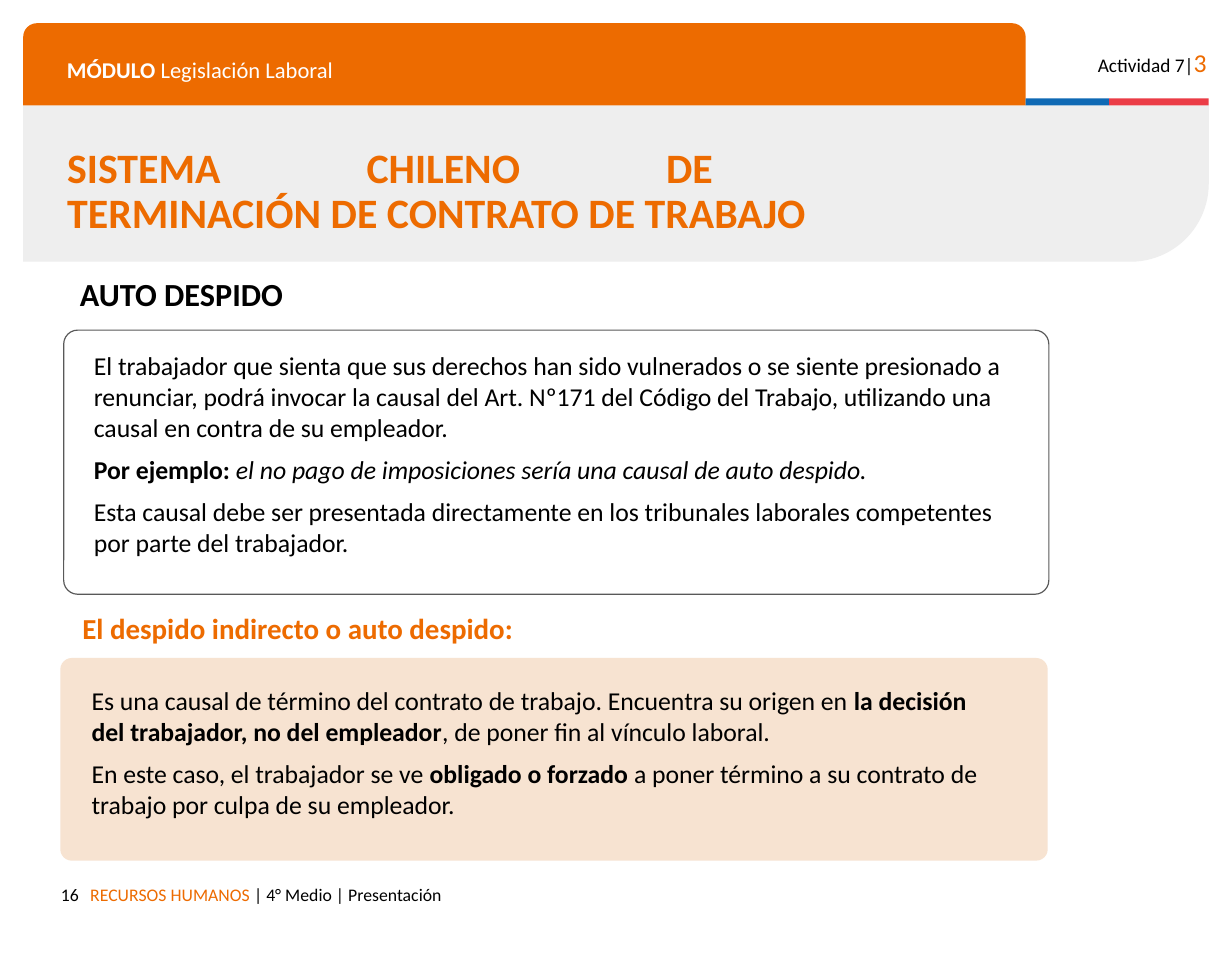
import pptx
import pptx.dml.color
import pptx.enum.shapes
import pptx.enum.text
import pptx.util
import lxml.etree

COLORS = {
    "orange": "ED6B00", "grey": "EEEEEE", "blue": "0F69B4", "red": "EB3C46",
    "peach": "F7E3D1", "outline": "595959", "black": "000000", "white": "FFFFFF",
}
SHAPES = pptx.enum.shapes.MSO_SHAPE
ALIGN = pptx.enum.text.PP_ALIGN
COLUMNS, ROWS = 106.3, 82.7
CELL = pptx.util.Inches(0.1)


def color(name):
    return pptx.dml.color.RGBColor.from_string(COLORS[name])


def place(box, left, top, width, height):
    return [round(cells * CELL) for cells in (box[0] + left, box[1] + top, width, height)]


def add_panel(slide, geometry, area, fill=None, outline=None, corners=()):
    panel = slide.shapes.add_shape(geometry, *area)
    panel.shadow.inherit = False
    for index, corner in enumerate(corners):
        panel.adjustments[index] = corner
    if fill:
        panel.fill.solid()
        panel.fill.fore_color.rgb = color(fill)
    else:
        panel.fill.background()
    if outline:
        panel.line.color.rgb = color(outline)
        panel.line.width = pptx.util.Pt(0.75)
    else:
        panel.line.fill.background()
    return panel


def write(slide, area, paragraphs, holder=None, size=16, ink="black", bold=False,
          align=ALIGN.LEFT, before=0, spacing=1.0, margin=0.05):
    if holder is None:
        holder = slide.shapes.add_textbox(*area)
    else:
        holder.left, holder.top, holder.width, holder.height = area
        slide.shapes.element.append(holder.element)
    frame = holder.text_frame
    frame.word_wrap = True
    frame.auto_size = pptx.enum.text.MSO_AUTO_SIZE.NONE
    frame.vertical_anchor = pptx.enum.text.MSO_ANCHOR.TOP
    frame.margin_left = frame.margin_right = pptx.util.Inches(0.1)
    frame.margin_top = frame.margin_bottom = pptx.util.Inches(margin)
    for index, runs in enumerate(paragraphs):
        paragraph = frame.add_paragraph() if index else frame.paragraphs[0]
        paragraph.alignment = align
        paragraph.line_spacing = spacing
        paragraph.space_before = pptx.util.Pt(before)
        properties = paragraph._p.get_or_add_pPr()
        properties.set("marL", "0")
        properties.set("indent", "0")
        lxml.etree.SubElement(properties, pptx.oxml.ns.qn("a:buNone"))
        for words, changes in runs:
            if words == "\n":
                paragraph.add_line_break()
                continue
            run = paragraph.add_run()
            run.text = words
            run.font.name = "Calibri"
            run.font.size = pptx.util.Pt(changes.get("size", size))
            run.font.color.rgb = color(changes.get("ink", ink))
            run.font.bold = changes.get("bold", bold)
            run.font.italic = changes.get("italic", False)


def add_header(slide, box):
    tab_width, tab_height, stripe = 86.5, 7.1, 0.6
    band = add_panel(slide, SHAPES.ROUND_1_RECTANGLE,
                     place(box, 0, tab_height, box[2], box[3] - tab_height),
                     "grey", corners=[0.5])
    band.element.spPr.xfrm.set("flipV", "1")
    add_panel(slide, SHAPES.ROUND_2_SAME_RECTANGLE,
              place(box, 0, 0, tab_width, tab_height), "orange", corners=[0.167, 0])
    left = tab_width
    for fill, width in (("blue", 7.2), ("red", 8.6)):
        add_panel(slide, SHAPES.RECTANGLE,
                  place(box, left, tab_height - stripe, width, stripe), fill)
        left += width
    write(slide, place(box, 2.8, 1.8, 81.4, 3.5),
          [[("MÓDULO ", {"bold": True}), ("Legislación Laboral", {})]],
          size=14, ink="white", margin=0.1)
    write(slide, place(box, 90.3, 1, 12.8, 3.8),
          [[("Actividad 7|", {}), ("3", {"size": 16, "ink": "orange"})]],
          size=12, align=ALIGN.RIGHT, margin=0.1)
    write(slide, place(box, 2.8, 10.2, 70.4, 9),
          [[("SISTEMA CHILENO DE ", {}), ("\n", {}),
            ("TERMINACIÓN DE CONTRATO DE TRABAJO", {})]],
          holder=slide.shapes.title, size=26, ink="orange", bold=True,
          align=ALIGN.JUSTIFY, spacing=0.9)


def add_section(slide, box, holders, heading, heading_area, heading_format,
                body, body_area, panel_top, panel_format):
    add_panel(slide, SHAPES.ROUNDED_RECTANGLE,
              place(box, 0, panel_top, box[2], box[3] - panel_top), **panel_format)
    write(slide, place(box, *heading_area), [[(heading, {})]],
          holder=holders[0], bold=True, **heading_format)
    write(slide, place(box, *body_area), body, holder=holders[1], before=7)


def add_footer(slide, box):
    write(slide, place(box, 0, 0, 5.8, 2.9), [[("16", {})]],
          size=11, align=ALIGN.RIGHT, margin=0.1)
    write(slide, place(box, 4.8, 0, box[2] - 4.8, box[3]),
          [[("RECURSOS HUMANOS ", {"ink": "orange"}),
            ("| 4° Medio | Presentación", {})]], size=11, margin=0.1)


def main():
    deck = pptx.Presentation()
    deck.slide_width, deck.slide_height = round(COLUMNS * CELL), round(ROWS * CELL)
    slide = deck.slides.add_slide(deck.slide_layouts.get_by_name("Comparison"))
    holders = list(slide.placeholders)[1:]
    strong = {"bold": True}

    add_header(slide, (2, 2, COLUMNS - 4, 20.6))
    add_section(
        slide, (5.5, 23.2, 85, 28.1), holders[:2],
        "AUTO DESPIDO", (0.4, 0, 71.2, 4.4), {"size": 20},
        [[("El trabajador que sienta que sus derechos han sido vulnerados o se siente "
           "presionado a renunciar, podrá invocar la causal del Art. Nº171 del Código "
           "del Trabajo, utilizando una causal en contra de su empleador.", {})],
         [("Por ejemplo: ", strong),
          ("el no pago de imposiciones sería una causal de auto despido.",
           {"italic": True})],
         [("Esta causal debe ser presentada directamente en los tribunales laborales "
           "competentes por parte del trabajador.", {})]],
        (1.6, 6.5, 81.2, 19.1), 5.3, {"outline": "outline", "corners": [0.053]})
    add_section(
        slide, (5.2, 52.2, 85.2, 22.1), holders[2:],
        "El despido indirecto o auto despido:", (0.9, 0, 66.7, 4),
        {"size": 18, "ink": "orange"},
        [[("Es una causal de término del contrato de trabajo. Encuentra su origen en ", {}),
          ("la decisión del trabajador, no del empleador", strong),
          (", de poner fin al vínculo laboral.", {})],
         [("En este caso, el trabajador se ve ", {}),
          ("obligado o forzado ", strong),
          ("a poner término a su contrato de trabajo por culpa de su empleador.", {})]],
        (1.7, 6.4, 79.3, 12.8), 4.6, {"fill": "peach", "corners": [0.057]})
    add_footer(slide, (2, 75.3, 76.3, 3.8))
    deck.save("out.pptx")


if __name__ == "__main__":
    main()
